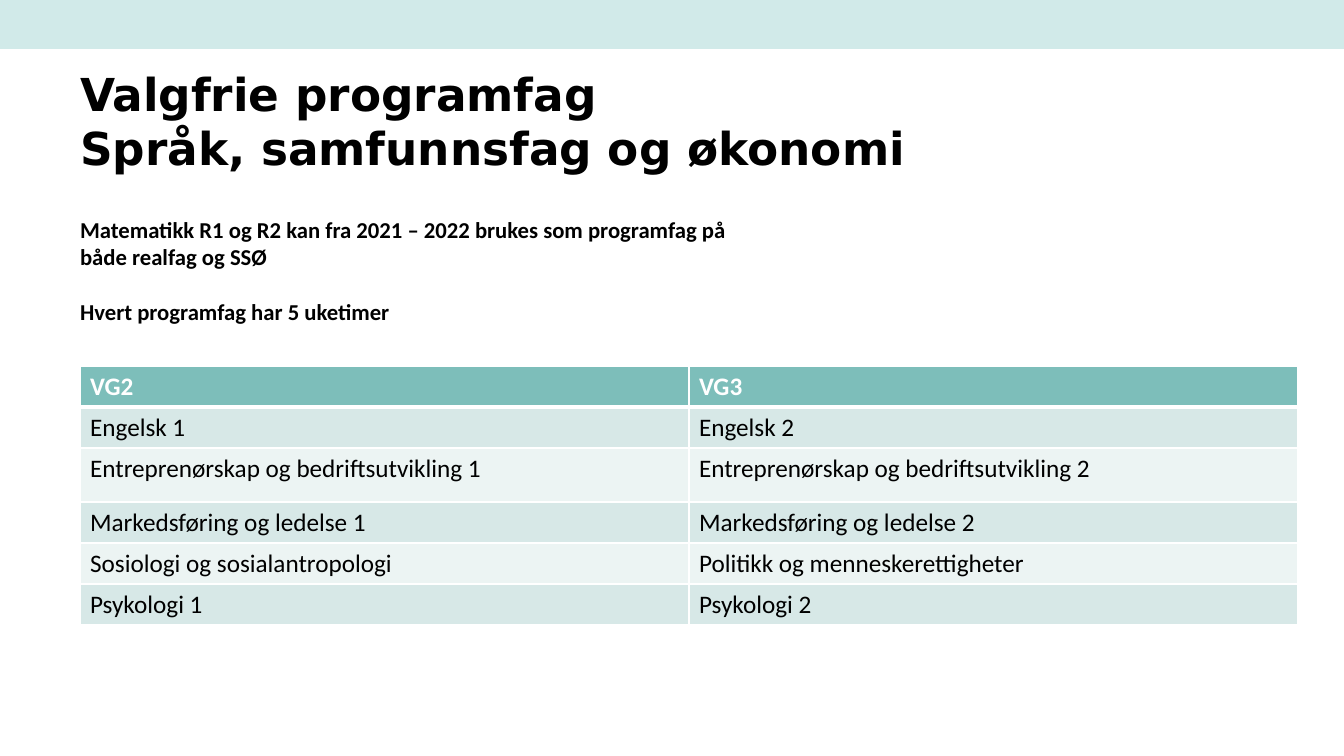
import pptx
import pptx.util
import pptx.dml.color
import pptx.enum.shapes
import pptx.enum.text
import pptx.oxml.ns
import lxml.etree

EMU_PER_PX = 914400 / 100.8

HEADING = {"name": "DejaVu Sans", "size": 32.4, "bold": True, "color": "000000"}
REMARK = {"name": "Calibri", "size": 16.2, "bold": True, "color": "000000"}
TABLE_HEAD = {"name": "Calibri", "size": 18, "bold": True, "color": "FFFFFF"}
TABLE_BODY = {"name": "Calibri", "size": 18, "bold": False, "color": "000000"}

# Text, format and space before in points
INTRO_LINES = [
    ("Valgfrie programfag", HEADING, 0),
    ("Språk, samfunnsfag og økonomi", HEADING, 0),
    ("Matematikk R1 og R2 kan fra 2021 – 2022 brukes som programfag på", REMARK, 29),
    ("både realfag og SSØ", REMARK, 0),
    ("Hvert programfag har 5 uketimer", REMARK, 20),
]

SUBJECTS = [
    ("VG2", "VG3"),
    ("Engelsk 1", "Engelsk 2"),
    ("Entreprenørskap og bedriftsutvikling 1", "Entreprenørskap og bedriftsutvikling 2"),
    ("Markedsføring og ledelse 1", "Markedsføring og ledelse 2"),
    ("Sosiologi og sosialantropologi", "Politikk og menneskerettigheter"),
    ("Psykologi 1", "Psykologi 2"),
]
ROW_HEIGHTS = [41, 41, 54, 41, 41, 41]


def px(length):
    return pptx.util.Emu(round(length * EMU_PER_PX))


def rgb(value):
    return pptx.dml.color.RGBColor.from_string(value)


def set_attributes(target, values):
    for key, value in values.items():
        setattr(target, key, value)


class SlideBuilder:
    header_fill = "7DBEBA"
    row_fills = ["ECF4F3", "D7E8E7"]
    rule_color = "FFFFFF"

    def __init__(self, slide):
        self.slide = slide

    def styled_run(self, paragraph, text, style):
        run = paragraph.add_run()
        run.text = text
        set_attributes(run.font, {
            "name": style["name"],
            "size": pptx.util.Pt(style["size"]),
            "bold": style["bold"],
        })
        run.font.color.rgb = rgb(style["color"])

    def band(self, left, top, width, height, color):
        band = self.slide.shapes.add_shape(
            pptx.enum.shapes.MSO_SHAPE.RECTANGLE,
            px(left), px(top), px(width), px(height))
        band.shadow.inherit = False
        band.fill.solid()
        band.fill.fore_color.rgb = rgb(color)
        band.line.fill.background()

    def title(self, left, top, width, height, lines):
        title = self.slide.shapes.title
        set_attributes(title, {"left": px(left), "top": px(top),
                               "width": px(width), "height": px(height)})
        frame = title.text_frame
        set_attributes(frame, {
            "margin_left": 0, "margin_right": 0, "margin_top": px(4), "margin_bottom": 0,
            "word_wrap": True,
            "auto_size": pptx.enum.text.MSO_AUTO_SIZE.NONE,
            "vertical_anchor": pptx.enum.text.MSO_ANCHOR.TOP,
        })
        for index, (text, style, space) in enumerate(lines):
            paragraph = frame.add_paragraph() if index else frame.paragraphs[0]
            set_attributes(paragraph, {
                "alignment": pptx.enum.text.PP_ALIGN.LEFT,
                "line_spacing": 1.0,
                "space_before": pptx.util.Pt(space),
            })
            self.styled_run(paragraph, text, style)

    def borders(self, cell, widths):
        properties = cell._tc.get_or_add_tcPr()
        qn = pptx.oxml.ns.qn
        for side, width in widths.items():
            line = lxml.etree.SubElement(
                properties, qn(f"a:ln{side}"), w=str(pptx.util.Pt(width)))
            fill = lxml.etree.SubElement(line, qn("a:solidFill"))
            lxml.etree.SubElement(fill, qn("a:srgbClr"), val=self.rule_color)

    def table(self, left, top, column_width, row_heights, rows):
        columns = len(rows[0])
        table = self.slide.shapes.add_table(
            len(rows), columns, px(left), px(top),
            px(column_width * columns), px(sum(row_heights))).table
        for column in table.columns:
            column.width = px(column_width)
        for index, (height, texts) in enumerate(zip(row_heights, rows)):
            table.rows[index].height = px(height)
            color = self.row_fills[index % 2] if index else self.header_fill
            for position, text in enumerate(texts):
                cell = table.cell(index, position)
                # The rule under the header is heavier
                self.borders(cell, {"L": 1, "R": 1,
                                    "T": 3 if index == 1 else 1,
                                    "B": 3 if index == 0 else 1})
                cell.fill.solid()
                cell.fill.fore_color.rgb = rgb(color)
                self.styled_run(cell.text_frame.paragraphs[0], text,
                                TABLE_BODY if index else TABLE_HEAD)


def main():
    presentation = pptx.Presentation()
    set_attributes(presentation, {"slide_width": px(1344), "slide_height": px(756)})
    title_only = presentation.slide_layouts[5]
    builder = SlideBuilder(presentation.slides.add_slide(title_only))

    # Top band, heading with remarks, subject table
    builder.band(0, 0, 1344, 49, "D1EAE9")
    builder.title(80, 62, 1122, 81, INTRO_LINES)
    builder.table(80, 366, 609, ROW_HEIGHTS, SUBJECTS)

    presentation.save("out.pptx")


if __name__ == "__main__":
    main()
